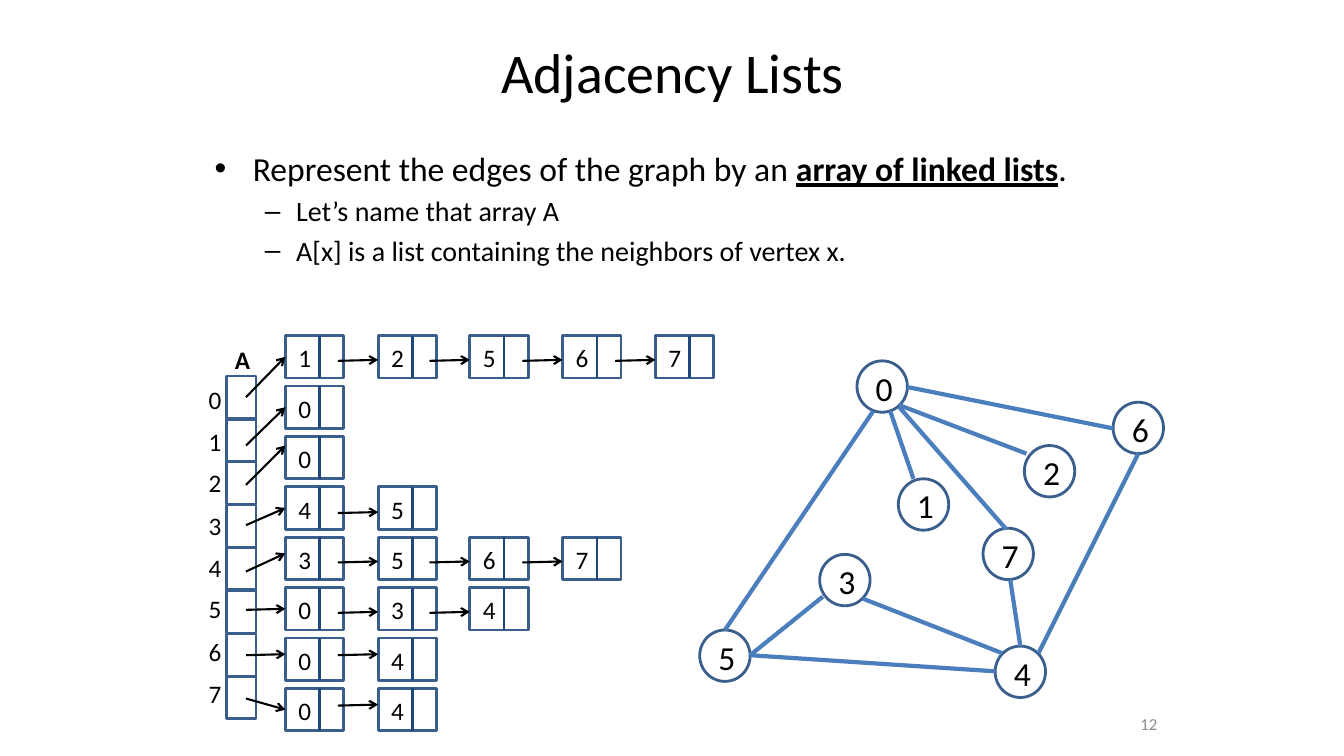
import pptx
import pptx.util
import pptx.dml.color
import pptx.enum.shapes
import pptx.enum.text
import pptx.oxml.ns
import lxml.etree

PX = 9144  # one px is a hundredth of an inch
theme = {
    "font": "Calibri", "ink": "000000", "gray": "8C8C8C",
    "rim": "3A5F8C", "split": "1F497D", "edge": "4B7EBC",
    "title": 40, "lead": 24, "sub": 20, "cell": 18, "node": 24, "page": 12,
}
Kind = pptx.enum.shapes.MSO_SHAPE
Align = pptx.enum.text.PP_ALIGN
Anchor = pptx.enum.text.MSO_ANCHOR
rgb = pptx.dml.color.RGBColor.from_string
qn = pptx.oxml.ns.qn

deck = pptx.Presentation()
deck.slide_width, deck.slide_height = 1333 * PX, 750 * PX
slide = deck.slides.add_slide(deck.slide_layouts[6])
shapes = slide.shapes


def put(kind, x, y, w, h, text="", size="cell", align=Align.LEFT,
        pad=(10, 5), color="ink", wrap=True, anchor=Anchor.MIDDLE):
    """Add an outlined shape, or a text box when kind is None."""
    area = [round(n) * PX for n in (x, y, w, h)]
    if kind is None:
        item = shapes.add_textbox(*area)
    else:
        item = shapes.add_shape(kind, *area)
        item.shadow.inherit = False
        item.fill.background()
        item.line.color.rgb = rgb(theme["rim"])
        item.line.width = pptx.util.Pt(2)
    frame = item.text_frame
    frame.word_wrap, frame.vertical_anchor = wrap, anchor
    frame.margin_left, frame.margin_top = pad[0] * PX, pad[1] * PX
    frame.margin_right = frame.margin_bottom = 0
    frame.text = text
    frame.paragraphs[0].alignment = align
    for run in frame.paragraphs[0].runs:
        run.font.name = theme["font"]
        run.font.size = pptx.util.Pt(theme[size])
        run.font.color.rgb = rgb(theme[color])
    return item


def wire(x1, y1, x2, y2, color, width, arrow=False):
    """Add a straight line, with an open arrowhead on request."""
    line = shapes.add_connector(
        pptx.enum.shapes.MSO_CONNECTOR.STRAIGHT,
        *[round(n) * PX for n in (x1, y1, x2, y2)])
    line.line.color.rgb = rgb(theme[color])
    line.line.width = pptx.util.Pt(width)
    if arrow:
        lxml.etree.SubElement(line.line._get_or_add_ln(), qn("a:tailEnd"), type="arrow")
    lxml.etree.SubElement(line._element.spPr, qn("a:effectLst"))
    return line


# Title and page number
put(None, 67, 8, 1200, 125, "Adjacency Lists", "title", Align.CENTER, pad=(0, 0))
put(None, 925, 698, 223, 40, "12", "page", Align.RIGHT, pad=(0, 0), color="gray")

# Bullets: level, sign, indent, hang, size, space before, runs
bullets = [
    (0, "•", 38, 38, "lead", 5, ["Represent the edges of the graph by an ",
                                 "array of linked lists", "."]),
    (1, "–", 81, 31, "sub", 4, ["Let’s name that array A"]),
    (1, "–", 81, 31, "sub", 4, ["A[x] is a list containing the neighbors of vertex x."]),
]
body = put(None, 203, 142, 930, 167, anchor=Anchor.TOP).text_frame
for i, (level, sign, left, hang, size, gap, parts) in enumerate(bullets):
    para = body.paragraphs[0] if i == 0 else body.add_paragraph()
    para.level = level
    para.space_before = pptx.util.Pt(gap)
    props = para._p.get_or_add_pPr()
    props.set("marL", str(left * PX))
    props.set("indent", str(-hang * PX))
    lxml.etree.SubElement(props, qn("a:buFont"), typeface="Arial")
    lxml.etree.SubElement(props, qn("a:buChar"), char=sign)
    for j, part in enumerate(parts):
        run = para.add_run()
        run.text = part
        run.font.name = theme["font"]
        run.font.size = pptx.util.Pt(theme[size])
        run.font.color.rgb = rgb(theme["ink"])
        if j == 1:
            run.font.bold = run.font.underline = True

# Graph vertices
nodes = {0: (850, 358), 1: (891, 475), 7: (975, 524), 2: (1016, 442),
         5: (694, 625), 3: (813, 550), 4: (987, 641), 6: (1104, 399)}
for name, (x, y) in nodes.items():
    put(Kind.OVAL, x, y, 50, 51, str(name), "node", Align.CENTER, pad=(4, 2))

# Graph edges
edges = [
    (900, 384, 1104, 425), (892, 402, 1018, 450), (883, 408, 906, 475),
    (866, 408, 719, 625), (892, 404, 998, 525), (744, 650, 816, 592),
    (744, 650, 987, 666), (856, 594, 994, 648), (1002, 575, 1012, 641),
    (1129, 450, 1030, 648),
]
for edge in edges:
    wire(*edge, "edge", 3)

# Array A with its indices
head = put(None, 223, 337, 35, 40, "A", wrap=False, anchor=Anchor.TOP)
head.text_frame.paragraphs[0].runs[0].font.bold = True
for i in range(8):
    put(None, 197, 376 + 41.7 * i, 33, 40, str(i), wrap=False, anchor=Anchor.TOP)
    put(Kind.RECTANGLE, 225, 373 + 42.6 * i, 29, 42)

# Linked lists: neighbors, start and end of the array arrow, drop of link arrows
lists = [
    ("12567", 394, 355, 25), ("0", 442, 402, 0), ("0", 481, 442, 0),
    ("45", 521, 504, 26), ("3567", 567, 549, 25), ("034", 605, 604, 25),
    ("04", 650, 649, 17), ("04", 693, 704, 17),
]
for i, (names, start, end, drop) in enumerate(lists):
    top = 333 + 50 * i
    for j, name in enumerate(names):
        left = round(283 + 91.75 * j)
        cell = put(Kind.RECTANGLE, left, top, 58, 42, name, pad=(13, 2))
        wire(left + 34, top, left + 34, top + 42, "split", 1.75)
        if j == 0:
            arrow = wire(244, start, left, end, "ink", 1.5, True)
            if abs(end - top - 21) <= 2:
                arrow.end_connect(cell, 1)
        else:
            wire(left - 40, top + drop, left, top + drop - 1, "ink", 1.5, True)

deck.save("out.pptx")
